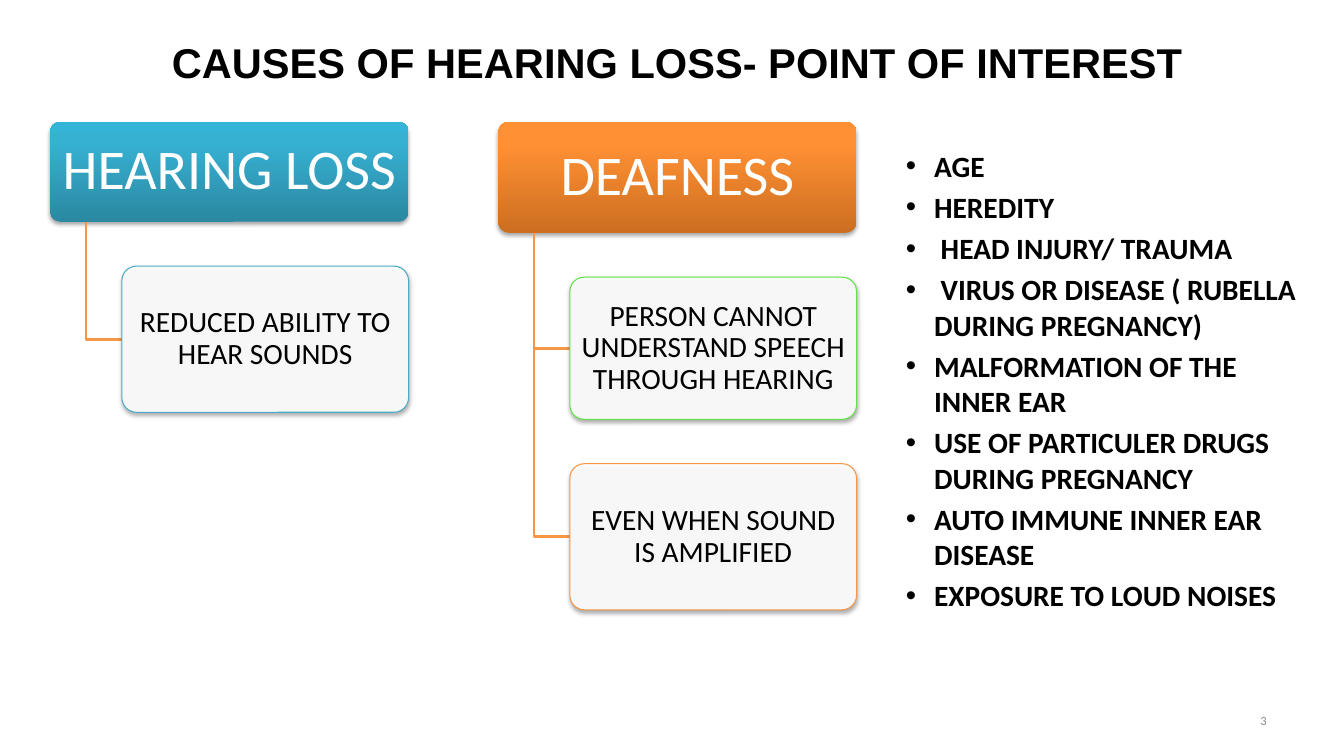
from copy import deepcopy

from lxml.etree import SubElement
from pptx import Presentation
from pptx.dml.color import RGBColor
from pptx.enum.shapes import MSO_SHAPE
from pptx.enum.text import MSO_ANCHOR, PP_ALIGN
from pptx.oxml.ns import qn
from pptx.util import Inches, Pt

THEME = {
    "black": "000000", "white": "FFFFFF", "grey": "8C8C8C",
    "blue": "4BACC6", "green": "60E146", "orange": "F79646",
    "blue_stops": ["2A88A2", "37B1D2", "34B4D6"],
    "orange_stops": ["CC6E20", "FF9034", "FF9136"],
    "title": 29.7, "heading": 40, "text": 21, "number": 9,
}

deck = Presentation()
deck.slide_width, deck.slide_height = Inches(13.33), Inches(7.5)
page = deck.slides.add_slide(deck.slide_layouts[6])
COLUMN, ROW = deck.slide_width / 15, deck.slide_height / 15


def write(box, lines, size, color="black", font="Calibri", bold=False, bullet=False,
          align=PP_ALIGN.CENTER, anchor=MSO_ANCHOR.MIDDLE, spacing=1.0, insets=(0.1, 0.05)):
    frame = box.text_frame
    frame.word_wrap = True
    frame.vertical_anchor = anchor
    frame.margin_left = frame.margin_right = Inches(insets[0])
    frame.margin_top = frame.margin_bottom = Inches(insets[1])
    for index, line in enumerate(lines):
        para = frame.paragraphs[0] if index == 0 else frame.add_paragraph()
        para.alignment, para.line_spacing = align, spacing
        if index:
            para.space_before = Pt(0.2 * THEME[size])
        if bullet:
            properties = para._p.get_or_add_pPr()
            properties.set("marL", str(Inches(0.28)))
            properties.set("indent", str(-Inches(0.28)))
            SubElement(properties, qn("a:buFont"), typeface="Arial")
            SubElement(properties, qn("a:buChar"), char="•")
        span = para.add_run()
        span.text = line
        span.font.name, span.font.size, span.font.bold = font, Pt(THEME[size]), bold
        span.font.color.rgb = RGBColor.from_string(THEME[color])


def add_card(left, top, width, height):
    card = page.shapes.add_shape(MSO_SHAPE.ROUNDED_RECTANGLE, *map(
        round, (left * COLUMN, top * ROW, width * COLUMN, height * ROW)))
    card.adjustments[0] = 0.1
    card.shadow.inherit = False
    effects = card._element.spPr.find(qn("a:effectLst"))
    shadow = SubElement(effects, qn("a:outerShdw"), blurRad=str(Pt(3.1)), dist=str(Pt(1.8)),
                        dir="5400000", rotWithShape="0")
    shade = SubElement(shadow, qn("a:srgbClr"), val=THEME["black"])
    SubElement(shade, qn("a:alpha"), val="35000")
    return card


# Title
title = page.shapes.add_textbox(*map(round, (0.75 * COLUMN, 0.6 * ROW, 13.5 * COLUMN, 1.24 * ROW)))
write(title, [" CAUSES OF HEARING LOSS- POINT OF INTEREST"], "title", font="Arial", bold=True)

# Two trees: heading, fill, heading rows, then (text, outline, rows) for each child
TREES = [
    ("HEARING LOSS", "blue_stops", 1.98, [("REDUCED ABILITY TO HEAR SOUNDS", "blue", 2.9)]),
    ("DEAFNESS", "orange_stops", 2.2, [
        ("PERSON CANNOT UNDERSTAND SPEECH THROUGH HEARING", "green", 2.82),
        ("EVEN WHEN SOUND IS AMPLIFIED", "orange", 2.9)]),
]
TOP, GAP, WIDTH, PITCH = 2.42, 0.88, 4, 5
TRUNK, INDENT = 0.1 * WIDTH, 0.2 * WIDTH

for number, (heading, stops, rows, children) in enumerate(TREES):
    left = 0.56 + number * PITCH
    card = add_card(left, TOP, WIDTH, rows)
    card.line.fill.background()
    card.fill.gradient()
    card.fill.gradient_angle = 90
    stop_list = card._element.spPr.find(qn("a:gradFill")).find(qn("a:gsLst"))
    stop_list.append(deepcopy(stop_list[-1]))
    for stop, color, position in zip(card.fill.gradient_stops, THEME[stops], (0, 0.8, 1)):
        stop.color.rgb = RGBColor.from_string(color)
        stop.position = position
    write(card, [heading], "heading", "white", spacing=0.9, insets=(0.08, 0.06))

    bottom = child_top = TOP + rows
    for text, outline, child_rows in children:
        child_top += GAP
        # Elbow from the heading to the child
        middle = child_top + child_rows / 2
        points = [(round(x * COLUMN), round(y * ROW)) for x, y in (
            (left + TRUNK, bottom), (left + TRUNK, middle), (left + INDENT, middle))]
        builder = page.shapes.build_freeform(*points[0])
        builder.add_line_segments(points[1:], close=False)
        elbow = builder.convert_to_shape()
        elbow.shadow.inherit = False
        elbow.fill.background()
        elbow.line.color.rgb = RGBColor.from_string(THEME["orange"])
        elbow.line.width = Pt(2)

        # Child card, slightly see-through
        child = add_card(left + INDENT, child_top, WIDTH - INDENT, child_rows)
        child.fill.solid()
        child.fill.fore_color.rgb = RGBColor.from_string(THEME["white"])
        tint = child._element.spPr.find(qn("a:solidFill"))[0]
        SubElement(tint, qn("a:alpha"), val="90000")
        child.line.color.rgb = RGBColor.from_string(THEME[outline])
        child.line.width = Pt(0.75)
        write(child, [text], "text", spacing=0.9, insets=(0.04, 0.03))
        child_top += child_rows

# List of causes
causes = page.shapes.add_textbox(*map(round, (10 * COLUMN, 2.84 * ROW, 4.69 * COLUMN, 9.9 * ROW)))
write(causes, [
    "AGE",
    "HEREDITY",
    " HEAD INJURY/ TRAUMA",
    " VIRUS OR DISEASE ( RUBELLA DURING PREGNANCY)",
    "MALFORMATION OF THE INNER EAR",
    "USE OF PARTICULER DRUGS DURING PREGNANCY",
    "AUTO IMMUNE INNER EAR DISEASE",
    "EXPOSURE TO LOUD NOISES",
], "text", bold=True, bullet=True, align=PP_ALIGN.LEFT, anchor=MSO_ANCHOR.TOP)

# Slide number
page_number = page.shapes.add_textbox(*map(
    round, (10.75 * COLUMN, 13.9 * ROW, 3.5 * COLUMN, 0.8 * ROW)))
write(page_number, ["3"], "number", "grey", align=PP_ALIGN.RIGHT)

deck.save("out.pptx")
